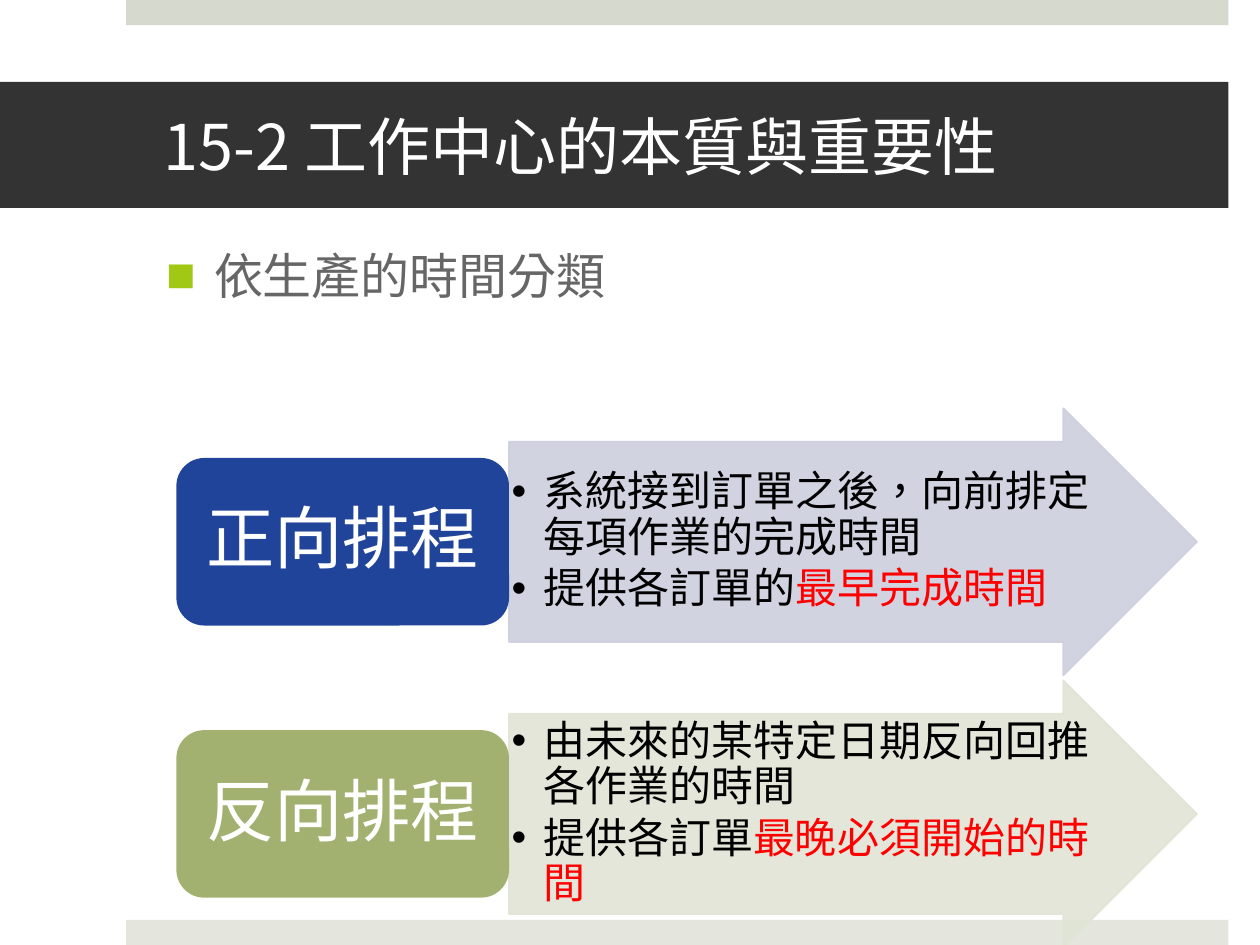
"""Build the slide on forward and backward scheduling of work centers."""
from dataclasses import dataclass

import pptx
import pptx.dml.color
import pptx.enum.shapes
import pptx.enum.text
import pptx.oxml.ns
import pptx.util
from lxml import etree

Inches = pptx.util.Inches
Pt = pptx.util.Pt
SHAPE = pptx.enum.shapes.MSO_SHAPE
ALIGN = pptx.enum.text.PP_ALIGN
ANCHOR = pptx.enum.text.MSO_ANCHOR
FONT = "Noto Sans CJK SC"
BULLET_FONT = "Arial"
FIRST_TOP, ROW_PITCH = 3.24, 2.16
ARROW_HEIGHT, LABEL_HEIGHT, POINTS_HEIGHT = 2.12, 1.33, 1.59


@dataclass(frozen=True)
class Box:
    left: float
    top: float
    width: float
    height: float


@dataclass(frozen=True)
class Schedule:
    label: str
    label_color: str
    arrow_color: str
    description: str
    lead: str
    highlight: str


SCHEDULES = (
    Schedule("正向排程", "21449B", "CDCFDE",
             "系統接到訂單之後，向前排定每項作業的完成時間",
             "提供各訂單的", "最早完成時間"),
    Schedule("反向排程", "A2B170", "E0E4D5",
             "由未來的某特定日期反向回推各作業的時間",
             "提供各訂單", "最晚必須開始的時間"),
)


def paint(color_format, color: str) -> None:
    color_format.rgb = pptx.dml.color.RGBColor.from_string(color)


def add_node(parent, tag: str, **attributes: str):
    return etree.SubElement(parent, pptx.oxml.ns.qn(tag), attributes)


def add_block(slide, kind, box: Box, color: str):
    block = slide.shapes.add_shape(
        kind, Inches(box.left), Inches(box.top), Inches(box.width), Inches(box.height))
    block.shadow.inherit = False
    block.fill.solid()
    paint(block.fill.fore_color, color)
    block.line.fill.background()
    return block


def add_text(slide, box: Box):
    return slide.shapes.add_textbox(
        Inches(box.left), Inches(box.top), Inches(box.width), Inches(box.height)).text_frame


def set_frame(frame, anchor, insets: tuple[float, ...], wrap: bool = True) -> None:
    left, top, right, bottom = map(Inches, insets)
    settings = {"margin_left": left, "margin_top": top, "margin_right": right,
                "margin_bottom": bottom, "vertical_anchor": anchor, "word_wrap": wrap}
    for name, value in settings.items():
        setattr(frame, name, value)


def write(paragraph, runs: list[tuple[str, str]], size: float, **settings) -> None:
    for name, value in {"alignment": ALIGN.LEFT, **settings}.items():
        setattr(paragraph, name, value)
    for text, color in runs:
        run = paragraph.add_run()
        run.text = text
        for name, value in {"size": Pt(size), "name": FONT}.items():
            setattr(run.font, name, value)
        paint(run.font.color, color)
        run.font._element.set("lang", "zh-TW")
        add_node(run.font._element, "a:ea", typeface=FONT)


def add_bullet(paragraph, mark: str, indent: float, color: str) -> None:
    properties = paragraph._p.get_or_add_pPr()
    properties.set("marL", str(Inches(indent)))
    properties.set("indent", str(-Inches(indent)))
    add_node(add_node(properties, "a:buClr"), "a:srgbClr", val=color)
    add_node(properties, "a:buFont", typeface=BULLET_FONT)
    add_node(properties, "a:buChar", char=mark)


def add_label(slide, schedule: Schedule, top: float) -> None:
    box = Box(1.4, top + (ARROW_HEIGHT - LABEL_HEIGHT) / 2, 2.64, LABEL_HEIGHT)
    label = add_block(slide, SHAPE.ROUNDED_RECTANGLE, box, schedule.label_color)
    set_frame(label.text_frame, ANCHOR.MIDDLE, (0.16, 0.08, 0.16, 0.08), wrap=False)
    write(label.text_frame.paragraphs[0], [(schedule.label, "FFFFFF")], 39,
          alignment=ALIGN.CENTER, line_spacing=0.9)


def add_arrow(slide, schedule: Schedule, top: float) -> None:
    arrow = add_block(slide, SHAPE.RIGHT_ARROW, Box(4.04, top, 5.46, ARROW_HEIGHT),
                      schedule.arrow_color)
    arrow.adjustments[0], arrow.adjustments[1] = 0.75, 0.5
    arrow.line.width = Pt(1)
    arrow.line.fill.solid()
    paint(arrow.line.fill.fore_color, schedule.arrow_color)
    for color in arrow._element.spPr.iter(pptx.oxml.ns.qn("a:srgbClr")):
        add_node(color, "a:alpha", val="90000")


def add_points(slide, schedule: Schedule, top: float) -> None:
    frame = add_text(slide, Box(4.04, top + (ARROW_HEIGHT - POINTS_HEIGHT) / 2,
                                4.66, POINTS_HEIGHT))
    set_frame(frame, ANCHOR.MIDDLE, (0.02, 0.02, 0.02, 0.02))
    points = ([(schedule.description, "000000")],
              [(schedule.lead, "000000"), (schedule.highlight, "FF0000")])
    for paragraph, runs in zip((frame.paragraphs[0], frame.add_paragraph()), points):
        write(paragraph, runs, 24, level=1, line_spacing=0.9, space_after=Pt(3.6))
        add_bullet(paragraph, "•", 0.25, "000000")


def add_heading(slide) -> None:
    heading = add_block(slide, SHAPE.RECTANGLE, Box(0, 0.65, 9.75, 1), "333333")
    set_frame(heading.text_frame, ANCHOR.MIDDLE, (1.3, 0.05, 0.3, 0.05))
    write(heading.text_frame.paragraphs[0], [("15-2 工作中心的本質與重要性", "FFFFFF")], 36)


def add_topic(slide) -> None:
    frame = add_text(slide, Box(1.22, 1.9, 8.32, 4.96))
    set_frame(frame, ANCHOR.TOP, (0.1, 0.05, 0.1, 0.05))
    write(frame.paragraphs[0], [("依生產的時間分類", "666666")], 28, space_before=Pt(20))
    add_bullet(frame.paragraphs[0], "■", 0.38, "A2C816")


def main() -> None:
    deck = pptx.Presentation()
    deck.slide_width, deck.slide_height = Inches(10), Inches(7.5)
    slide = deck.slides.add_slide(deck.slide_layouts[6])
    for top, color in ((0, "D6D9CD"), (7.3, "E4E6DE")):
        add_block(slide, SHAPE.RECTANGLE, Box(1, top, 8.75, 0.2), color)
    add_heading(slide)
    add_topic(slide)
    for row, schedule in enumerate(SCHEDULES):
        top = FIRST_TOP + row * ROW_PITCH
        for add_part in (add_arrow, add_points, add_label):
            add_part(slide, schedule, top)
    deck.save("out.pptx")


if __name__ == "__main__":
    main()
